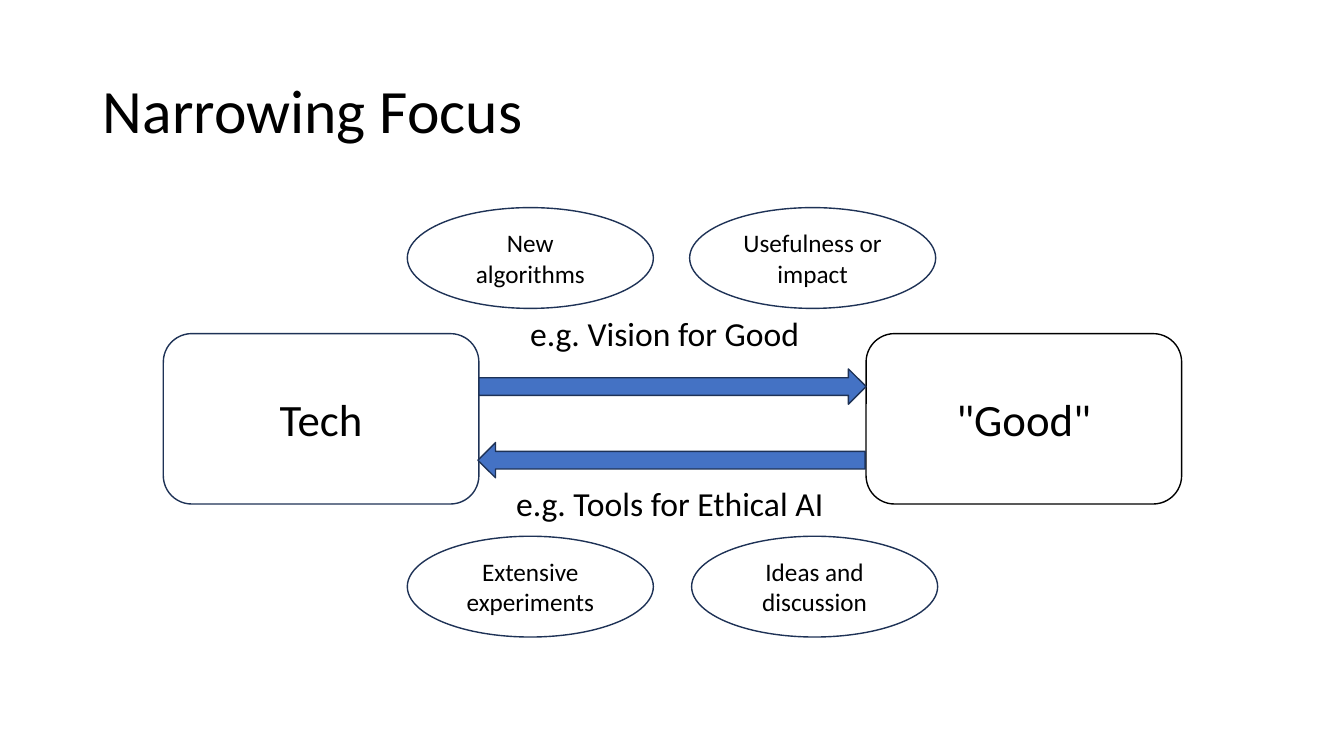
from dataclasses import dataclass

from pptx import Presentation
from pptx.dml.color import RGBColor
from pptx.enum.shapes import MSO_SHAPE
from pptx.enum.text import MSO_ANCHOR, MSO_AUTO_SIZE, PP_ALIGN
from pptx.slide import Slide
from pptx.text.text import TextFrame
from pptx.util import Inches, Pt


@dataclass(frozen=True)
class Theme:
    font: str = "Calibri"
    ink: RGBColor = RGBColor(0x00, 0x00, 0x00)
    outline: RGBColor = RGBColor(0x1E, 0x32, 0x56)
    arrow: RGBColor = RGBColor(0x44, 0x72, 0xC4)
    title_size: int = 44
    pillar_size: int = 32
    example_size: int = 24
    quality_size: int = 18
    line_width: int = 1


THEME = Theme()


@dataclass(frozen=True)
class Node:
    text: str
    left: float
    top: float
    width: float
    height: float
    kind: MSO_SHAPE
    size: int
    outline: RGBColor = THEME.outline


@dataclass(frozen=True)
class Example:
    text: str
    left: float
    top: float
    width: float


@dataclass(frozen=True)
class Arrow:
    left: float
    top: float
    rotation: int


def quality(text: str, left: float, top: float) -> Node:
    return Node(text, left, top, 2.44, 1, MSO_SHAPE.OVAL, THEME.quality_size)


def pillar(text: str, left: float, outline: RGBColor) -> Node:
    return Node(text, left, 3.31, 3.13, 1.69, MSO_SHAPE.ROUNDED_RECTANGLE,
                THEME.pillar_size, outline)


NODES = [
    quality("New algorithms", 4.04, 2.06),
    quality("Usefulness or impact", 6.84, 2.06),
    quality("Extensive experiments", 4.04, 5.32),
    quality("Ideas and discussion", 6.86, 5.32),
    pillar("Tech", 1.62, THEME.outline),
    pillar('"Good"', 8.59, THEME.ink),
]
EXAMPLES = [
    Example("e.g. Vision for Good", 5.16, 3.06, 3),
    Example("e.g. Tools for Ethical AI", 5.02, 4.74, 3.29),
]
ARROWS = [Arrow(4.75, 3.66, 0), Arrow(4.74, 4.39, 180)]


def write(frame: TextFrame, text: str, size: int, alignment: PP_ALIGN) -> None:
    frame.text = text
    paragraph = frame.paragraphs[0]
    paragraph.alignment = alignment
    for span in paragraph.runs:
        span.font.name = THEME.font
        span.font.size = Pt(size)
        span.font.color.rgb = THEME.ink


def add_title(page: Slide, text: str) -> None:
    title = page.shapes.title
    title.left, title.top = Inches(0.92), Inches(0.4)
    title.width, title.height = Inches(11.5), Inches(1.45)
    title.text_frame.vertical_anchor = MSO_ANCHOR.MIDDLE
    write(title.text_frame, text, THEME.title_size, PP_ALIGN.LEFT)
    title.text_frame.paragraphs[0].line_spacing = 0.9


def add_node(page: Slide, node: Node) -> None:
    shape = page.shapes.add_shape(node.kind, Inches(node.left), Inches(node.top),
                                  Inches(node.width), Inches(node.height))
    shape.shadow.inherit = False
    shape.fill.background()
    shape.line.color.rgb = node.outline
    shape.line.width = Pt(THEME.line_width)
    shape.text_frame.vertical_anchor = MSO_ANCHOR.MIDDLE
    write(shape.text_frame, node.text, node.size, PP_ALIGN.CENTER)


def add_example(page: Slide, example: Example) -> None:
    box = page.shapes.add_textbox(Inches(example.left), Inches(example.top),
                                  Inches(example.width), Inches(0.5))
    box.text_frame.word_wrap = False
    box.text_frame.auto_size = MSO_AUTO_SIZE.SHAPE_TO_FIT_TEXT
    write(box.text_frame, example.text, THEME.example_size, PP_ALIGN.LEFT)


def add_arrow(page: Slide, arrow: Arrow) -> None:
    shape = page.shapes.add_shape(MSO_SHAPE.RIGHT_ARROW, Inches(arrow.left),
                                  Inches(arrow.top), Inches(3.84), Inches(0.35))
    shape.rotation = arrow.rotation
    shape.shadow.inherit = False
    shape.fill.solid()
    shape.fill.fore_color.rgb = THEME.arrow
    shape.line.color.rgb = THEME.outline
    shape.line.width = Pt(THEME.line_width)


def main() -> None:
    deck = Presentation()
    deck.slide_width, deck.slide_height = Inches(13.33), Inches(7.5)
    page = deck.slides.add_slide(deck.slide_layouts.get_by_name("Title Only"))
    add_title(page, "Narrowing Focus")
    for node in NODES:
        add_node(page, node)
    for example in EXAMPLES:
        add_example(page, example)
    for arrow in ARROWS:
        add_arrow(page, arrow)
    deck.save("out.pptx")


if __name__ == "__main__":
    main()
